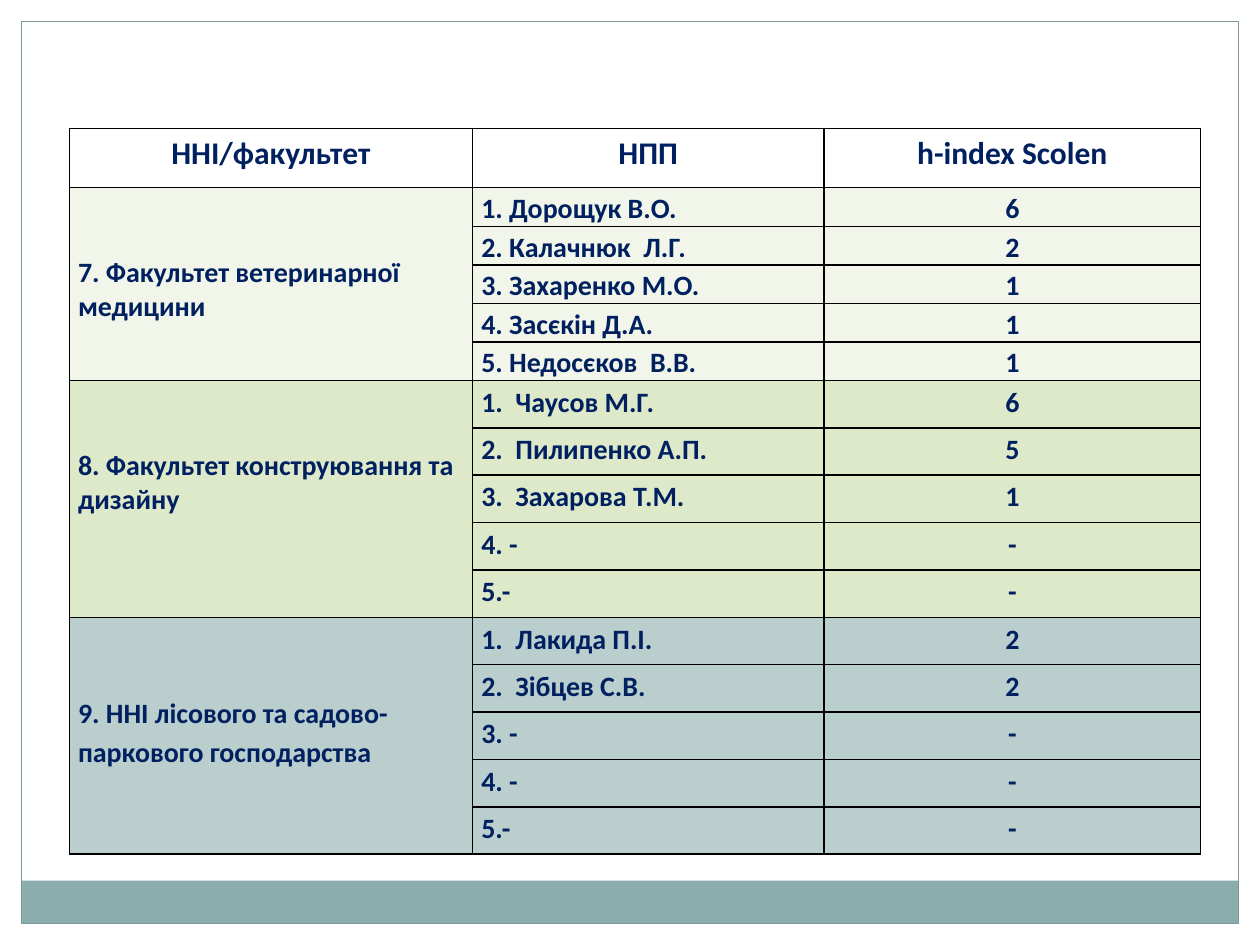
from pptx import Presentation
from pptx.dml.color import RGBColor
from pptx.enum.shapes import MSO_SHAPE
from pptx.enum.text import PP_ALIGN
from pptx.oxml.ns import qn
from pptx.util import Inches, Pt
from lxml import etree

RECT = MSO_SHAPE.RECTANGLE
LEFT, CENTER = PP_ALIGN.LEFT, PP_ALIGN.CENTER

COLORS = {
    "text": "002060", "border": "000000", "header": "FFFFFF",
    "margin": "FFFFFF", "band": "8CADAE", "frame": "7C999A",
    "veterinary": "F2F6EA", "design": "DEE9C9", "forestry": "BACECE",
}
FONT = {"name": "Calibri", "bold": True}
COL_WIDTHS = (3.2, 2.79, 2.99)
HEADER_HEIGHT = 0.47
HEADERS = ("ННІ/факультет", "НПП", "h-index Scolen")

# label, fill, block height, label offset from the top,
# line spacing of the label and of the members, members
FACULTIES = [
    ("7. Факультет ветеринарної медицини", "veterinary", 1.53, 0.54, 1.0, 1.12,
     [("1. Дорощук В.О.", "6"), ("2. Калачнюк  Л.Г.", "2"),
      ("3. Захаренко М.О.", "1"), ("4. Засєкін Д.А.", "1"),
      ("5. Недосєков  В.В.", "1")]),
    ("8. Факультет конструювання та дизайну", "design", 1.88, 0.54, 1.0, 1.15,
     [("1.  Чаусов М.Г.", "6"), ("2.  Пилипенко А.П.", "5"),
      ("3.  Захарова Т.М.", "1"), ("4. -", "-"), ("5.-", "-")]),
    ("9. ННІ лісового та садово-паркового господарства", "forestry", 1.88, 0.59, 1.15, 1.15,
     [("1.  Лакида П.І.", "2"), ("2.  Зібцев С.В.", "2"),
      ("3. -", "-"), ("4. -", "-"), ("5.-", "-")]),
]


def rgb(key):
    return RGBColor.from_string(COLORS[key])


def add_rect(slide, left, top, width, height, fill=None, line=None):
    sp = slide.shapes.add_shape(
        RECT, Inches(left), Inches(top), Inches(width), Inches(height))
    sp.shadow.inherit = False
    if fill:
        sp.fill.solid()
        sp.fill.fore_color.rgb = rgb(fill)
    else:
        sp.fill.background()
    if line:
        sp.line.color.rgb = rgb(line)
        sp.line.width = Pt(0.75)
    else:
        sp.line.fill.background()


def add_frame(slide, width, height, margin=0.17, band_height=0.34):
    """White page margins, a band along the bottom and an outline."""
    add_rect(slide, 0, 0, width, margin, fill="margin")
    for left in (width - margin, 0):
        add_rect(slide, left, 0, margin, height, fill="margin")
    inner_width, inner_height = width - 2 * margin, height - 2 * margin
    add_rect(slide, margin, height - margin - band_height,
             inner_width, band_height, fill="band")
    add_rect(slide, margin, margin, inner_width, inner_height, line="frame")


def set_borders(cell):
    """Draw a 1 pt line on all four sides; lines must precede the fill."""
    tc_pr = cell._tc.get_or_add_tcPr()
    for i, side in enumerate(("a:lnL", "a:lnR", "a:lnT", "a:lnB")):
        ln = etree.Element(qn(side), w=str(Pt(1)))
        fill = etree.SubElement(ln, qn("a:solidFill"))
        etree.SubElement(fill, qn("a:srgbClr"), val=COLORS["border"])
        tc_pr.insert(i, ln)


def style_cell(cell, fill):
    cell.fill.solid()
    cell.fill.fore_color.rgb = rgb(fill)
    margins = {"margin_left": 0.07, "margin_right": 0.07,
               "margin_top": 0, "margin_bottom": 0}
    for name, value in margins.items():
        setattr(cell, name, Inches(value))
    set_borders(cell)


def write_cell(cell, text, align=LEFT, size=16, spacing=1.15):
    p = cell.text_frame.paragraphs[0]
    p.alignment = align
    p.line_spacing = spacing
    r = p.add_run()
    r.text = text
    for name, value in {**FONT, "size": Pt(size)}.items():
        setattr(r.font, name, value)
    r.font.color.rgb = rgb("text")


def fill_faculty(table, first, faculty):
    """Fill one faculty's rows from row first; return the next free row."""
    label, fill, height, offset, label_spacing, spacing, members = faculty
    last = first + len(members) - 1
    for row, (name, index) in enumerate(members, first):
        table.rows[row].height = Inches(height / len(members))
        for cell in table.rows[row].cells:
            style_cell(cell, fill)
        write_cell(table.cell(row, 1), name, spacing=spacing)
        write_cell(table.cell(row, 2), index, CENTER, spacing=spacing)
    title = table.cell(first, 0)
    title.merge(table.cell(last, 0))
    title.margin_top = Inches(offset)
    write_cell(title, label, spacing=label_spacing)
    return last + 1


def add_index_table(slide, left, top, width, height):
    row_count = 1 + sum(len(faculty[-1]) for faculty in FACULTIES)
    table = slide.shapes.add_table(
        row_count, len(HEADERS), Inches(left), Inches(top),
        Inches(width), Inches(height)).table
    for column, column_width in zip(table.columns, COL_WIDTHS):
        column.width = Inches(column_width)
    table.rows[0].height = Inches(HEADER_HEIGHT)
    for cell, text in zip(table.rows[0].cells, HEADERS):
        style_cell(cell, "header")
        write_cell(cell, text, CENTER, size=18)
    row = 1
    for faculty in FACULTIES:
        row = fill_faculty(table, row, faculty)


def main():
    prs = Presentation()
    prs.slide_width, prs.slide_height = Inches(10), Inches(7.5)
    slide = prs.slides.add_slide(prs.slide_layouts[6])
    add_frame(slide, 10, 7.5)
    add_index_table(slide, 0.55, 1.02, sum(COL_WIDTHS), 5.77)
    prs.save("out.pptx")


if __name__ == "__main__":
    main()
